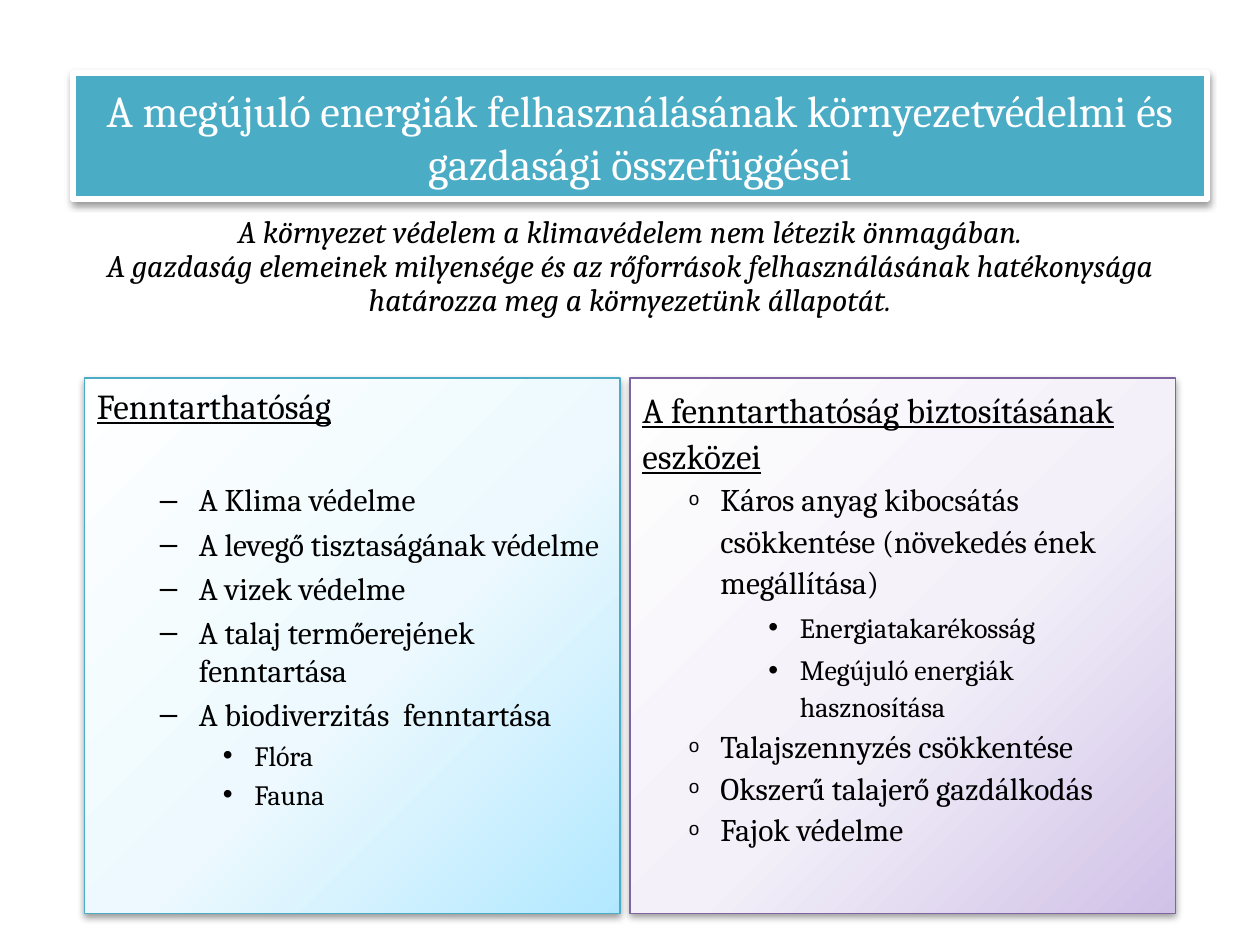
"""Build a slide on renewable energy, the environment and the economy."""
import pptx
import pptx.util
import pptx.dml.color
import pptx.enum.shapes
import pptx.enum.text
import pptx.oxml
import pptx.oxml.ns

RGB = pptx.dml.color.RGBColor
Inches, Pt = pptx.util.Inches, pptx.util.Pt
ALIGN = pptx.enum.text.PP_ALIGN
ANCHOR = pptx.enum.text.MSO_ANCHOR
WHITE, BLACK = RGB(255, 255, 255), RGB(0, 0, 0)
TEAL, PLUM = RGB(0x4B, 0xAC, 0xC6), RGB(0x80, 0x64, 0xA2)
ICE = RGB(0xFE, 0xFF, 0xFF), RGB(0xED, 0xF9, 0xFE), RGB(0xB2, 0xE8, 0xFF)
MAUVE = RGB(0xFE, 0xFE, 0xFE), RGB(0xF3, 0xF0, 0xF9), RGB(0xD0, 0xC1, 0xE7)
STOPS = 0, 55, 100
NS = pptx.oxml.ns.nsdecls("a")

TITLE = [("title", "A megújuló energiák felhasználásának környezetvédelmi és gazdasági összefüggései")]
INTRO = [
    ("intro", "A környezet védelem a klimavédelem nem létezik önmagában."),
    ("intro", "A gazdaság elemeinek milyensége és az rőforrások felhasználásának "
              "hatékonysága határozza meg a környezetünk állapotát."),
]
GOALS = [
    ("head", "Fenntarthatóság"),
    ("first", "A Klima védelme"),
    ("dash", "A levegő tisztaságának védelme"),
    ("dash", "A vizek védelme"),
    ("dash", "A talaj termőerejének fenntartása"),
    ("dash", "A biodiverzitás  fenntartása"),
    ("dot", "Flóra"),
    ("dot", "Fauna"),
]
TOOLS = [
    ("tall", "A fenntarthatóság biztosításának eszközei"),
    ("ring", "Káros anyag kibocsátás csökkentése (növekedés ének megállítása)"),
    ("point", "Energiatakarékosság"),
    ("point", "Megújuló energiák hasznosítása"),
    ("ring", "Talajszennyzés csökkentése"),
    ("ring", "Okszerű talajerő gazdálkodás"),
    ("ring", "Fajok védelme"),
]

HEAD = {"size": Pt(20), "underline": True}
ITEM, SUB = {"size": Pt(18)}, {"size": Pt(16)}
DASH = "–", 0.81, -0.31, 100
DOT = "•", 1.25, -0.25, 100
RING = "o", 0.62, -0.25, 60
STYLES = {
    "title": (None, {"alignment": ALIGN.CENTER}, {"size": Pt(25.2)}),
    "intro": (None, {"alignment": ALIGN.CENTER, "line_spacing": 0.9},
              {"size": Pt(18), "italic": True}),
    "head": (None, {}, HEAD),
    "tall": (None, {"line_spacing": 1.1}, HEAD),
    "first": (DASH, {"level": 1, "space_before": Pt(31)}, ITEM),
    "dash": (DASH, {"level": 1, "space_before": Pt(3.6)}, ITEM),
    "dot": (DOT, {"level": 2, "space_before": Pt(3.2)}, SUB),
    "ring": (RING, {"level": 1, "line_spacing": 1.1}, ITEM),
    "point": (DOT, {"level": 2, "line_spacing": 1.1, "space_before": Pt(3.2)}, SUB),
}


def assign(thing, values):
    for name, value in values.items():
        setattr(thing, name, value)


def mark(para, sign, left, hang, size):
    props = para._p.get_or_add_pPr()
    props.set("marL", str(Inches(left)))
    props.set("indent", str(Inches(hang)))
    for tag in (f'buSzPct {NS} val="{size * 1000}"', f'buFont {NS} typeface="Arial"',
                f'buChar {NS} char="{sign}"'):
        props.append(pptx.oxml.parse_xml(f"<a:{tag}/>"))


def write(shape, lines, color=BLACK, anchor=ANCHOR.TOP):
    frame = shape.text_frame
    assign(frame, {"word_wrap": True, "vertical_anchor": anchor})
    for index, (kind, text) in enumerate(lines):
        para = frame.add_paragraph() if index else frame.paragraphs[0]
        bullet, layout, font = STYLES[kind]
        para.text = text
        if bullet:
            mark(para, *bullet)
        assign(para, {"alignment": ALIGN.LEFT, **layout})
        assign(para.runs[0].font, {"name": "Cambria", **font})
        para.runs[0].font.color.rgb = color


def panel(slide, box, line, width):
    shape = slide.shapes.add_shape(pptx.enum.shapes.MSO_SHAPE.RECTANGLE, *map(Inches, box))
    shape.line.color.rgb = line
    shape.line.width = Pt(width)
    shape.shadow.inherit = False
    shape._element.spPr.find(pptx.oxml.ns.qn("a:effectLst")).append(pptx.oxml.parse_xml(
        f'<a:outerShdw {NS} blurRad="{Pt(4.1)}" dist="{Pt(2)}" dir="5400000" rotWithShape="0">'
        '<a:srgbClr val="000000"><a:alpha val="40000"/></a:srgbClr></a:outerShdw>'))
    return shape


def blend(shape, tones):
    shape.fill.gradient()
    old = shape._element.spPr.find(pptx.oxml.ns.qn("a:gradFill"))
    stops = "".join(f'<a:gs pos="{stop * 1000}"><a:srgbClr val="{tone}"/></a:gs>'
                    for stop, tone in zip(STOPS, tones))
    old.getparent().replace(old, pptx.oxml.parse_xml(
        f'<a:gradFill {NS} rotWithShape="1"><a:gsLst>{stops}</a:gsLst><a:path path="circle">'
        '<a:fillToRect l="-40000" t="-90000" r="140000" b="190000"/></a:path></a:gradFill>'))


def main():
    deck = pptx.Presentation()
    deck.slide_width, deck.slide_height = Inches(10), Inches(7.5)
    slide = deck.slides.add_slide(deck.slide_layouts[6])

    title = panel(slide, (0.58, 0.58, 9, 1), WHITE, 3)
    title.fill.solid()
    title.fill.fore_color.rgb = TEAL
    write(title, TITLE, WHITE, ANCHOR.MIDDLE)
    write(slide.shapes.add_textbox(*map(Inches, (0.5, 1.67, 9, 1))), INTRO)

    left, gap = 0.67, 0.08
    for wide, line, tones, lines in ((4.25, TEAL, ICE, GOALS), (4.33, PLUM, MAUVE, TOOLS)):
        card = panel(slide, (left, 3, wide, 4.25), line, 0.75)
        blend(card, tones)
        write(card, lines)
        left += wide + gap

    deck.save("out.pptx")


if __name__ == "__main__":
    main()
